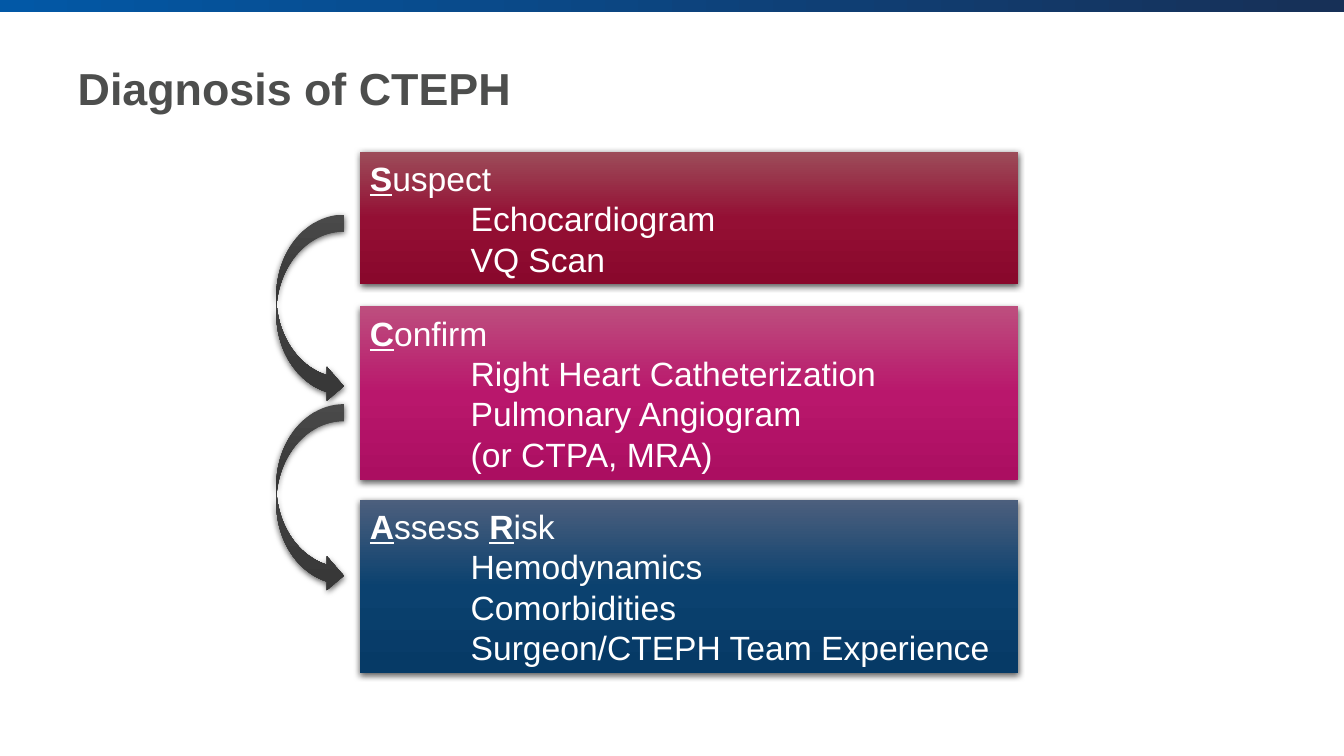
"""Build the slide on the diagnosis of CTEPH."""
from dataclasses import dataclass

from lxml import etree
from pptx import Presentation
from pptx.dml.color import RGBColor
from pptx.enum.shapes import MSO_SHAPE
from pptx.enum.text import MSO_ANCHOR, PP_ALIGN
from pptx.oxml.ns import qn
from pptx.util import Inches, Pt

RECTANGLE = MSO_SHAPE.RECTANGLE
CURVED_ARROW = MSO_SHAPE.CURVED_RIGHT_ARROW
LEFT = PP_ALIGN.LEFT
MIDDLE = MSO_ANCHOR.MIDDLE
FONT_NAME = "Arial"
ARROW_COLORS = ("5D5D5D", "3F3F3F", "383838")
ARROW_TOPS = (2.13, 4.01)


@dataclass(frozen=True)
class Step:
    """One diagnostic step with its heading words and details."""

    top: float
    height: float
    colors: tuple[str, str, str]
    heading: str
    details: tuple[str, ...]


STEPS = (
    Step(1.51, 1.31, ("9C4C59", "940F34", "89082C"), "Suspect",
         ("Echocardiogram", "VQ Scan")),
    Step(3.04, 1.72, ("BD4E7E", "B9176C", "AB0E61"), "Confirm",
         ("Right Heart Catheterization", "Pulmonary Angiogram", "(or CTPA, MRA)")),
    Step(4.96, 1.72, ("4C5F7D", "0B416F", "063A66"), "Assess Risk",
         ("Hemodynamics", "Comorbidities", "Surgeon/CTEPH Team Experience")),
)


def format_font(font, size: float, color: str, bold: bool = False) -> None:
    """Set the typeface, size, colour and weight of a font."""
    font.name = FONT_NAME
    font.size = Pt(size)
    font.bold = bold
    font.color.rgb = RGBColor.from_string(color)


def fill_gradient(shape, colors: tuple[str, ...], angle: int) -> None:
    """Fill a shape with evenly spaced colours, the angle running clockwise."""
    shape.fill.gradient()
    shape.fill.gradient_angle = -angle % 360
    stops = shape.element.spPr.find(qn("a:gradFill")).find(qn("a:gsLst"))
    for stop in list(stops):
        stops.remove(stop)
    for index, color in enumerate(colors):
        position = 100000 * index // (len(colors) - 1)
        stop = etree.SubElement(stops, qn("a:gs"), pos=str(position))
        etree.SubElement(stop, qn("a:srgbClr"), val=color)


def add_shadow(shape) -> None:
    """Cast a soft black shadow below a shape."""
    effects = shape.element.spPr.find(qn("a:effectLst"))
    shadow = etree.SubElement(
        effects, qn("a:outerShdw"), blurRad=str(Pt(4.5)), dist=str(Pt(1.5)),
        dir="5400000", rotWithShape="0")
    color = etree.SubElement(shadow, qn("a:srgbClr"), val="000000")
    etree.SubElement(color, qn("a:alpha"), val="63000")


def add_gradient_shape(slide, kind: MSO_SHAPE, box: tuple[float, ...],
                       colors: tuple[str, ...], angle: int = 90):
    """Add a borderless gradient shape at left, top, width, height."""
    shape = slide.shapes.add_shape(kind, *(Inches(length) for length in box))
    shape.shadow.inherit = False
    shape.line.fill.background()
    fill_gradient(shape, colors, angle)
    return shape


def add_heading(paragraph, heading: str) -> None:
    """Write a heading with a bold, underlined initial on every word."""
    for index, word in enumerate(heading.split()):
        if index:
            format_font_run(paragraph, " ")
        format_font_run(paragraph, word[0], emphasized=True)
        format_font_run(paragraph, word[1:])


def format_font_run(paragraph, text: str, emphasized: bool = False) -> None:
    """Append a white run, optionally bold and underlined."""
    run = paragraph.add_run()
    run.text = text
    format_font(run.font, 24, "FFFFFF", emphasized)
    run.font.underline = emphasized


def add_step(slide, step: Step) -> None:
    """Draw the box of one diagnostic step."""
    shape = add_gradient_shape(
        slide, RECTANGLE, (3.57, step.top, 6.53, step.height), step.colors)
    add_shadow(shape)
    text_frame = shape.text_frame
    text_frame.word_wrap = True
    text_frame.vertical_anchor = MIDDLE
    add_heading(text_frame.paragraphs[0], step.heading)
    for detail in step.details:
        paragraph = text_frame.add_paragraph()
        format_font_run(paragraph, detail)
        properties = paragraph._p.get_or_add_pPr()
        properties.set("marL", str(Inches(1)))
        properties.set("indent", "0")
    for paragraph in text_frame.paragraphs:
        paragraph.alignment = LEFT
        paragraph.line_spacing = Pt(28.8)


def add_title(slide) -> None:
    """Place and format the slide title."""
    title = slide.shapes.title
    title.left, title.top = Inches(0.67), Inches(0.22)
    title.width, title.height = Inches(11.75), Inches(1.3)
    title.text_frame.text = "Diagnosis of CTEPH"
    title.text_frame.vertical_anchor = MIDDLE
    paragraph = title.text_frame.paragraphs[0]
    paragraph.alignment = LEFT
    format_font(paragraph.runs[0].font, 32, "4D4E4D", bold=True)


def main() -> None:
    """Build and save the presentation."""
    presentation = Presentation()
    presentation.slide_width = Inches(13.33)
    presentation.slide_height = Inches(7.5)
    slide = presentation.slides.add_slide(presentation.slide_layouts[5])
    add_gradient_shape(
        slide, RECTANGLE, (0, 0, 13.33, 0.12), ("0258A6", "173057"), angle=0)
    add_title(slide)
    for step in STEPS:
        add_step(slide, step)
    for top in ARROW_TOPS:
        arrow = add_gradient_shape(
            slide, CURVED_ARROW, (2.74, top, 0.67, 1.87), ARROW_COLORS)
        add_shadow(arrow)
    presentation.save("out.pptx")


if __name__ == "__main__":
    main()
